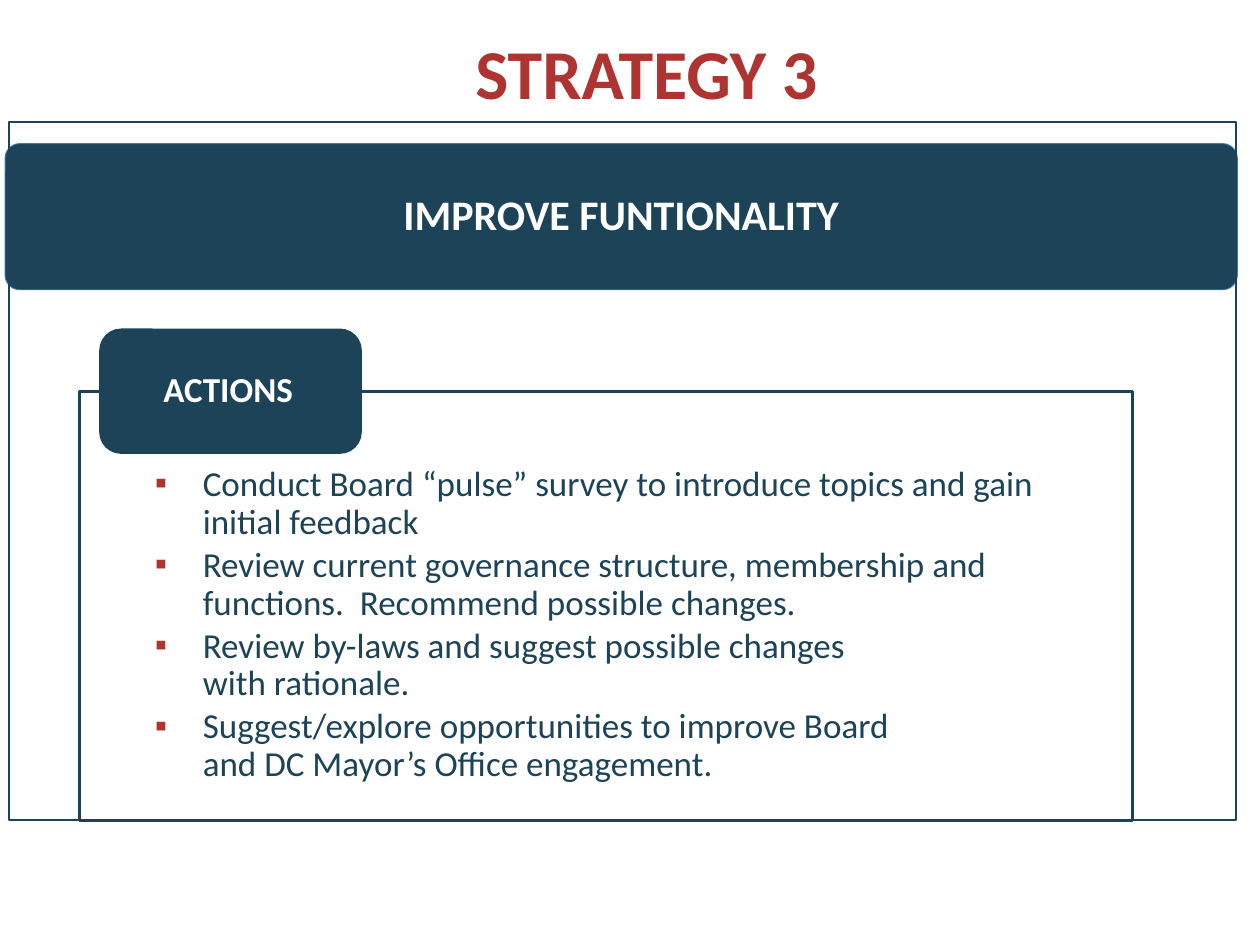
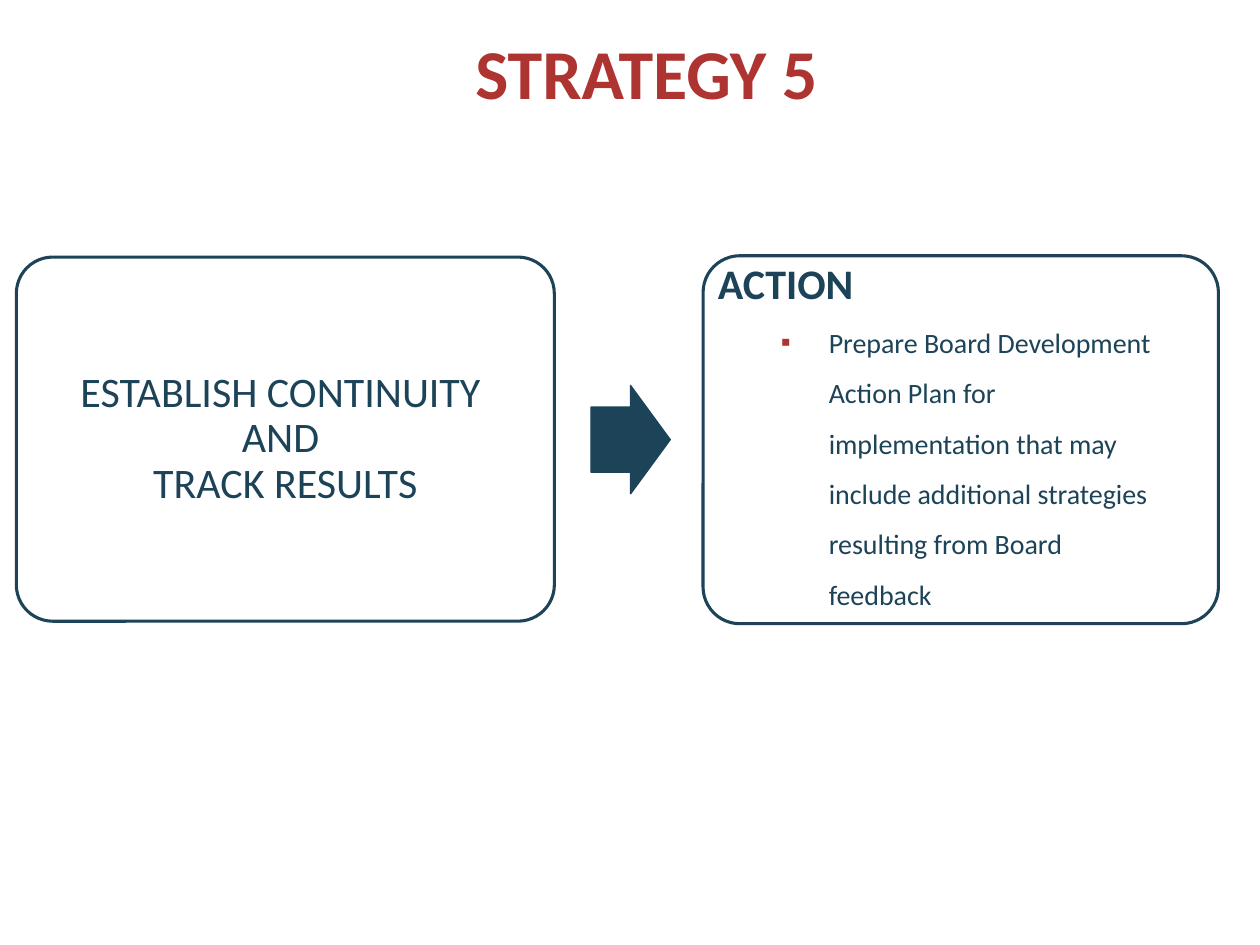
from dataclasses import dataclass

from lxml import etree
from pptx import Presentation
from pptx.dml.color import RGBColor
from pptx.enum.shapes import MSO_SHAPE
from pptx.enum.text import MSO_ANCHOR, MSO_AUTO_SIZE, PP_ALIGN
from pptx.oxml.ns import qn
from pptx.util import Pt

EMU_PER_PX = 9144
FONT = "Calibri"
COLORS = {"navy": "1C4358", "red": "AE3431", "white": "FFFFFF", "blue": "4472C4"}
RECT = MSO_SHAPE.RECTANGLE
ROUNDED = MSO_SHAPE.ROUNDED_RECTANGLE
ARROW = MSO_SHAPE.RIGHT_ARROW
TOP, MIDDLE = MSO_ANCHOR.TOP, MSO_ANCHOR.MIDDLE
LEFT, CENTER = PP_ALIGN.LEFT, PP_ALIGN.CENTER
NO_AUTOFIT = MSO_AUTO_SIZE.NONE
BULLET_HANG = 38


@dataclass(frozen=True)
class Para:
    text: str
    size: int
    color: str = "navy"
    bold: bool = False
    align: PP_ALIGN = LEFT
    spacing: float = 0.9
    after: int = 0
    bullet_indent: int = 0


@dataclass(frozen=True)
class Box:
    left: int
    top: int
    width: int
    height: int
    kind: MSO_SHAPE | None = None
    fill: str | None = None
    line: str = "navy"
    weight: float = 1.75
    adjust: tuple[float, ...] = ()
    paras: tuple[Para, ...] = ()
    anchor: MSO_ANCHOR = MIDDLE
    insets: tuple[int, int, int, int] = (10, 10, 10, 10)


@dataclass(frozen=True)
class SlideText:
    title: str
    boxes: tuple[Box, ...]


def px(n: int) -> int:
    return n * EMU_PER_PX


def rgb(name: str) -> RGBColor:
    return RGBColor.from_string(COLORS[name])


def add_bullet(p, indent: int) -> None:
    pPr = p._p.get_or_add_pPr()
    pPr.set("marL", str(px(indent)))
    pPr.set("indent", str(px(-BULLET_HANG)))
    clr = etree.SubElement(pPr, qn("a:buClr"))
    etree.SubElement(clr, qn("a:srgbClr"), val=COLORS["red"])
    etree.SubElement(pPr, qn("a:buFont"), typeface="Arial")
    etree.SubElement(pPr, qn("a:buChar"), char="▪")


def write_para(p, para: Para) -> None:
    if para.bullet_indent:
        add_bullet(p, para.bullet_indent)
    p.alignment = para.align
    p.line_spacing = para.spacing
    p.space_before = Pt(0)
    p.space_after = Pt(para.after)
    for i, line in enumerate(para.text.split("\n")):
        if i:
            p.add_line_break()
        r = p.add_run()
        r.text = line
        r.font.name = FONT
        r.font.size = Pt(para.size)
        r.font.bold = para.bold
        r.font.color.rgb = rgb(para.color)


def write_text(sp, box: Box) -> None:
    tf = sp.text_frame
    tf.word_wrap = True
    tf.auto_size = NO_AUTOFIT
    tf.vertical_anchor = box.anchor
    tf.margin_left, tf.margin_top, tf.margin_right, tf.margin_bottom = map(px, box.insets)
    for i, para in enumerate(box.paras):
        write_para(tf.add_paragraph() if i else tf.paragraphs[0], para)


def draw_box(s, box: Box) -> None:
    place = [px(n) for n in (box.left, box.top, box.width, box.height)]
    if box.kind is None:
        sp = s.shapes.add_textbox(*place)
    else:
        sp = s.shapes.add_shape(box.kind, *place)
        sp.shadow.inherit = False
        for i, value in enumerate(box.adjust):
            sp.adjustments[i] = value
        if box.fill:
            sp.fill.solid()
            sp.fill.fore_color.rgb = rgb(box.fill)
        else:
            sp.fill.background()
        sp.line.color.rgb = rgb(box.line)
        sp.line.width = Pt(box.weight)
    if box.paras:
        write_text(sp, box)


def draw_title(s, text: str) -> None:
    para = Para(text, 40, "red", True, CENTER)
    box = Box(38, 24, 950, 88, paras=(para,), anchor=TOP, insets=(10, 7, 10, 5))
    sp = s.shapes.title
    sp.left, sp.top = px(box.left), px(box.top)
    sp.width, sp.height = px(box.width), px(box.height)
    write_text(sp, box)


ACTIONS = (
    "Conduct Board “pulse” survey to introduce topics and gain initial feedback",
    "Review current governance structure, membership and functions.  Recommend possible changes.",
    "Review by-laws and suggest possible changes \nwith rationale.",
    "Suggest/explore opportunities to improve Board \nand DC Mayor’s Office engagement.",
)
ACTION_PLAN = (
    "Prepare Board Development Action Plan for implementation that may include "
    "additional strategies resulting from Board feedback"
)

SLIDES = (
    SlideText("STRATEGY 3", (
        Box(4, 114, 978, 116, ROUNDED, "navy", "blue", 0.5, (0.1,),
            (Para("IMPROVE FUNTIONALITY", 24, "white", True, CENTER),)),
        Box(63, 311, 836, 340, RECT, anchor=TOP, insets=(60, 59, 60, 16),
            paras=tuple(Para(a, 20, after=3, bullet_indent=BULLET_HANG) for a in ACTIONS)),
        Box(7, 97, 974, 554, RECT, weight=1),
        Box(80, 262, 206, 97, ROUNDED, "navy", insets=(45, 0, 20, 0),
            paras=(Para("ACTIONS", 20, "white", True),)),
    )),
    SlideText("STRATEGY 5", (
        Box(13, 204, 427, 289, ROUNDED, "white", adjust=(0.1,),
            paras=(Para("ESTABLISH CONTINUITY \nAND \nTRACK RESULTS", 24, align=CENTER),)),
        Box(469, 306, 63, 86, ARROW, "navy", weight=0.75, adjust=(0.6, 0.5)),
        Box(558, 203, 409, 292, ROUNDED, "white", adjust=(0.1,)),
        Box(560, 204, 376, 289, anchor=TOP, insets=(10, 5, 10, 5),
            paras=(Para("ACTION", 24, bold=True),
                   Para(ACTION_PLAN, 16, spacing=1.5, bullet_indent=88))),
    )),
)


def main() -> None:
    prs = Presentation()
    prs.slide_width, prs.slide_height = px(1000), px(750)
    title_only = prs.slide_layouts.get_by_name("Title Only")
    for content in SLIDES:
        s = prs.slides.add_slide(title_only)
        draw_title(s, content.title)
        for box in content.boxes:
            draw_box(s, box)
    prs.save("out.pptx")


if __name__ == "__main__":
    main()
